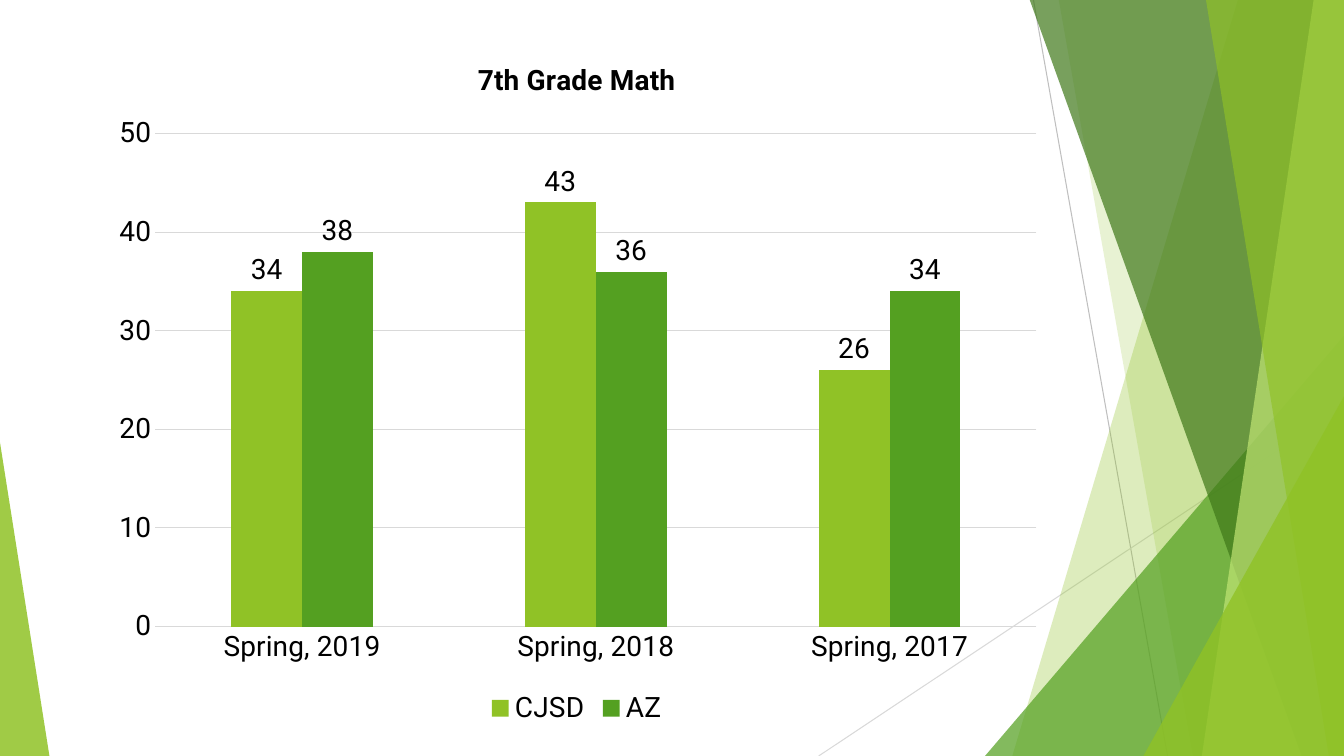
from lxml.etree import SubElement
from pptx import Presentation
from pptx.chart.data import CategoryChartData
from pptx.dml.color import RGBColor
from pptx.enum.chart import XL_CHART_TYPE as ChartType
from pptx.enum.chart import XL_LABEL_POSITION as LabelPosition
from pptx.enum.chart import XL_LEGEND_POSITION as LegendPosition
from pptx.enum.chart import XL_TICK_MARK as TickMark
from pptx.enum.shapes import MSO_CONNECTOR as Connector
from pptx.enum.shapes import MSO_SHAPE as Shape
from pptx.oxml import parse_xml
from pptx.oxml.ns import nsdecls, qn
from pptx.util import Pt

SCALE = 9144
WIDTH, HEIGHT = 1333, 750
FONT = "Roboto"
BLACK, GRID, GREY = "000000", "D9D9D9", "BFBFBF"
LIME, GREEN, FOREST, PALE = "90C226", "54A021", "3F7819", "C0E474"


def px(length):
    """Turn px into EMU."""
    return length * SCALE


def color(hex_string):
    """Turn a hex string into a colour."""
    return RGBColor.from_string(hex_string)


def paint(shape, fill, opacity):
    """Give a shape a translucent fill without line or shadow."""
    shape.shadow.inherit = False
    shape.line.fill.background()
    shape.fill.solid()
    shape.fill.fore_color.rgb = color(fill)
    solid = shape._element.spPr.find(qn("a:solidFill"))
    SubElement(solid[0], qn("a:alpha"), val=str(opacity * 1000))


def style_line(line, hex_string):
    """Set a thin line in one colour."""
    line.color.rgb = color(hex_string)
    line.width = Pt(0.75)


def style_font(font, bold=False):
    """Set the chart font."""
    font.name, font.size, font.bold = FONT, Pt(20), bold
    font.color.rgb = color(BLACK)


def add_line(slide, start, end, hex_string):
    """Draw a thin straight line."""
    line = slide.shapes.add_connector(
        Connector.STRAIGHT, *map(px, start), *map(px, end))
    style_line(line.line, hex_string)
    SubElement(line._element.spPr, qn("a:effectLst"))


def add_band(slide, top_left, bottom_left, fill, opacity):
    """Draw a slanted band that reaches the right edge of the slide."""
    builder = slide.shapes.build_freeform(px(top_left), px(-1))
    corners = [(WIDTH, -1), (WIDTH, HEIGHT), (bottom_left, HEIGHT)]
    builder.add_line_segments([(px(x), px(y)) for x, y in corners])
    paint(builder.convert_to_shape(), fill, opacity)


def add_triangle(slide, left, top, width, apex, fill, opacity):
    """Draw a triangle that stands on the bottom edge of the slide."""
    triangle = slide.shapes.add_shape(
        Shape.ISOSCELES_TRIANGLE, px(left), px(top), px(width), px(HEIGHT - top))
    triangle.adjustments[0] = apex
    paint(triangle, fill, opacity)


def add_facets(slide):
    """Draw the decorative lines, bands and triangles."""
    add_line(slide, (1025, 0), (1158, HEIGHT), GREY)
    add_line(slide, (WIDTH, 403), (812, HEIGHT), GRID)
    add_band(slide, 1228, 1004, LIME, 30)
    add_band(slide, 1050, 1183, LIME, 20)
    add_triangle(slide, 977, 333, 356, 1, GREEN, 72)
    add_band(slide, 1021, 1291, FOREST, 70)
    add_band(slide, 1303, 1192, PALE, 70)
    add_band(slide, 1196, 1318, LIME, 65)
    add_triangle(slide, 1134, 393, 199, 1, LIME, 80)
    add_triangle(slide, 0, 439, 49, 0, LIME, 85)


def style_axis(axis):
    """Set the labels of an axis and hide its ticks."""
    axis.major_tick_mark = axis.minor_tick_mark = TickMark.NONE
    style_font(axis.tick_labels.font)


def place_plot(chart, **fractions):
    """Set the inner plot area as fractions of the chart."""
    modes = '<c:xMode val="edge"/><c:yMode val="edge"/>'
    sizes = "".join(f'<c:{key} val="{val}"/>' for key, val in fractions.items())
    plot_area = chart._chartSpace.chart.plotArea
    for layout in plot_area.findall(qn("c:layout")):
        plot_area.remove(layout)
    plot_area.insert(0, parse_xml(
        f'<c:layout {nsdecls("c")}><c:manualLayout><c:layoutTarget val="inner"/>'
        f"{modes}{sizes}</c:manualLayout></c:layout>"))


def style_series(series, fill):
    """Colour a series and label its columns."""
    series.format.fill.solid()
    series.format.fill.fore_color.rgb = color(fill)
    labels = series.data_labels
    labels.show_value = True
    labels.position = LabelPosition.OUTSIDE_END
    style_font(labels.font)


def add_score_chart(slide):
    """Add the column chart of scores."""
    data = CategoryChartData()
    data.categories = ["Spring, 2019", "Spring, 2018", "Spring, 2017"]
    data.add_series("CJSD", [34, 43, 26])
    data.add_series("AZ", [38, 36, 34])
    chart = slide.shapes.add_chart(
        ChartType.COLUMN_CLUSTERED, px(97), px(36), px(950), px(689), data).chart
    style_font(chart.font)
    chart.has_title = True
    title = chart.chart_title.text_frame
    title.text = "7th Grade Math"
    style_font(title.paragraphs[0].runs[0].font, bold=True)
    chart.chart_title.include_in_layout = False
    chart.has_legend = True
    chart.legend.position = LegendPosition.BOTTOM
    chart.legend.include_in_layout = False
    style_font(chart.legend.font)
    style_axis(chart.category_axis)
    style_line(chart.category_axis.format.line, GRID)
    scores = chart.value_axis
    style_axis(scores)
    scores.minimum_scale, scores.maximum_scale, scores.major_unit = 0, 50, 10
    scores.format.line.fill.background()
    style_line(scores.major_gridlines.format.line, GRID)
    plot = chart.plots[0]
    plot.vary_by_categories = False
    plot.gap_width, plot.overlap = 215, 0
    for series, fill in zip(plot.series, (LIME, GREEN)):
        style_series(series, fill)
    place_plot(chart, x=0.06, y=0.14, w=0.92, h=0.71)


def main():
    """Build and save the slide."""
    presentation = Presentation()
    presentation.slide_width, presentation.slide_height = px(WIDTH), px(HEIGHT)
    slide = presentation.slides.add_slide(presentation.slide_layouts[6])
    add_facets(slide)
    add_score_chart(slide)
    presentation.save("out.pptx")


if __name__ == "__main__":
    main()
